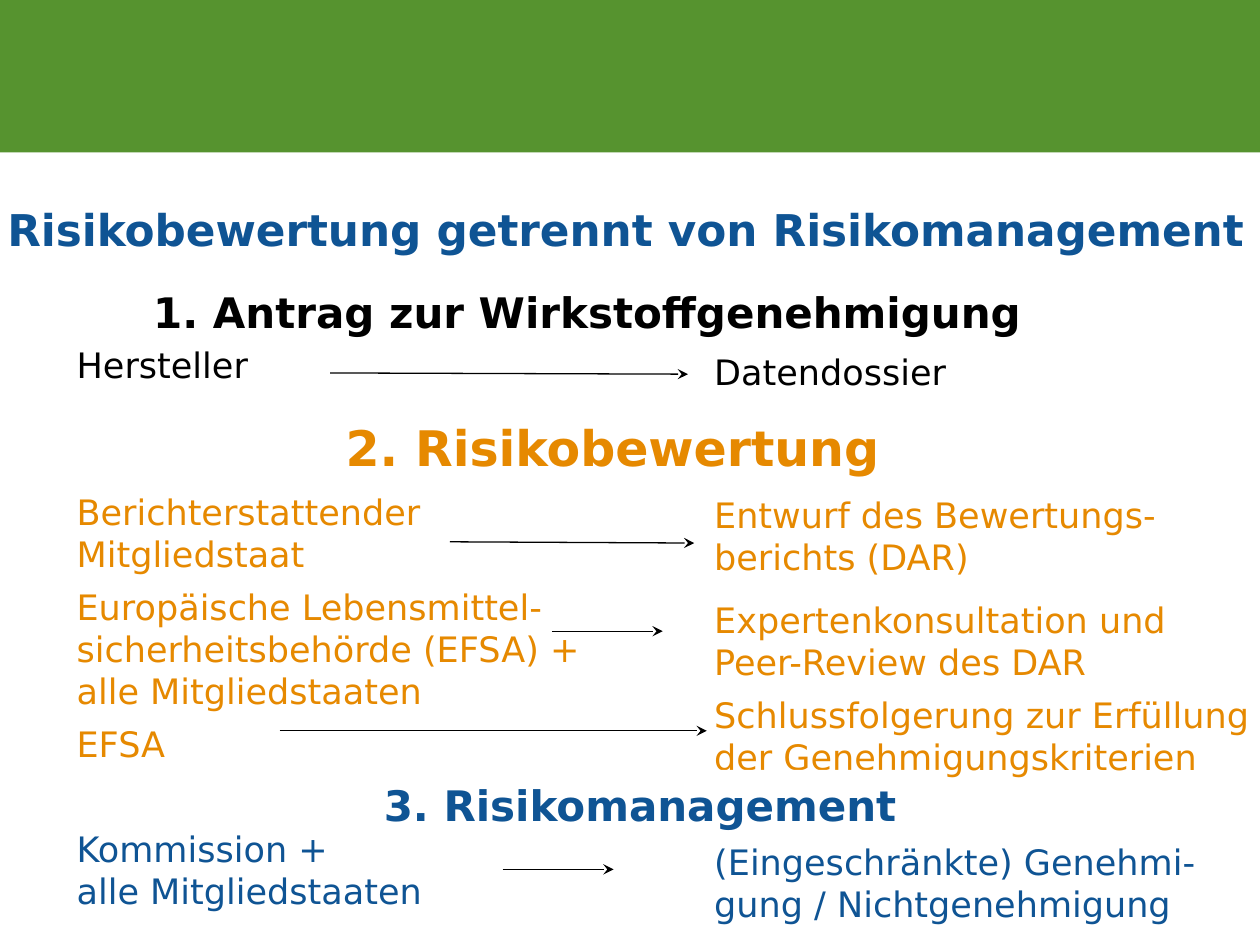
from lxml import etree
from pptx import Presentation
from pptx import util as u
from pptx.dml.color import RGBColor
from pptx.enum import shapes, text
from pptx.oxml.ns import qn

FONT = "DejaVu Sans"
GREEN, BLUE, ORANGE, BLACK, WHITE = "56932F", "0F5494", "E68900", "000000", "FFFFFF"
BODY_SIZE, LINE_HEIGHT = 20, 24

# Content
TITLE = "Risikobewertung getrennt von Risikomanagement"

# text, size, colour, (left, top, width, height)
HEADINGS = [
    ("2. Risikobewertung", 28, ORANGE, (0.35, 3.2, 9.02, 0.7)),
    ("1. Antrag zur Wirkstoffgenehmigung", 24, BLACK, (0.07, 2.18, 9.18, 0.59)),
    ("3. Risikomanagement", 24, BLUE, (2.64, 6.11, 4.88, 0.55)),
]

# Each entry: text, colour, space before; a heading fits into the wide gaps
ACTORS = [
    ("Hersteller", BLACK, 0),
    ("Berichterstattender Mitgliedstaat", ORANGE, 36 + LINE_HEIGHT),
    ("Europäische Lebensmittel-sicherheitsbehörde (EFSA) + alle Mitgliedstaaten", ORANGE, 6),
    ("EFSA", ORANGE, 6),
    ("Kommission +\nalle Mitgliedstaaten", BLUE, 36),
]
RESULTS = [
    ("Datendossier", BLACK, 0),
    ("Entwurf des Bewertungs-berichts (DAR)", ORANGE, 34 + LINE_HEIGHT),
    ("Expertenkonsultation und\nPeer-Review des DAR", ORANGE, 12),
    ("Schlussfolgerung zur Erfüllung der Genehmigungskriterien", ORANGE, 6),
    ("(Eingeschränkte) Genehmi-gung / Nichtgenehmigung", BLUE, 36),
]
COLUMNS = [(ACTORS, (0.51, 2.68, 4.22, 4.69)), (RESULTS, (5.57, 2.73, 4.6, 4.69))]

# Arrows from actor to result: x1, y1, x2, y2
ARROWS = [
    (2.62, 2.96, 5.46, 2.97),
    (3.57, 4.3, 5.51, 4.31),
    (4.38, 5.01, 5.26, 5.01),
    (2.22, 5.8, 5.61, 5.8),
    (3.99, 6.9, 4.87, 6.9),
]


def colour(value):
    return RGBColor.from_string(value)


def inches(lengths):
    return [u.Inches(length) for length in lengths]


def write(paragraph, words, size, ink, bold=False):
    for number, line in enumerate(words.split("\n")):
        if number:
            paragraph.add_line_break()
        run = paragraph.add_run()
        run.text = line
        run.font.name, run.font.size, run.font.bold = FONT, u.Pt(size), bold
        run.font.color.rgb = colour(ink)


def add_panel(slide, place, fill):
    panel = slide.shapes.add_shape(shapes.MSO_SHAPE.RECTANGLE, *inches(place))
    panel.shadow.inherit = False
    panel.fill.solid()
    panel.fill.fore_color.rgb = colour(fill)
    panel.line.fill.background()
    return panel


def add_frame(slide, place, anchor):
    frame = slide.shapes.add_textbox(*inches(place)).text_frame
    frame.word_wrap = True
    frame.vertical_anchor = anchor
    return frame


def add_column(slide, entries, place):
    frame = add_frame(slide, place, text.MSO_ANCHOR.TOP)
    for number, (words, ink, gap) in enumerate(entries):
        paragraph = frame.add_paragraph() if number else frame.paragraphs[0]
        if gap:
            paragraph.space_before = u.Pt(gap)
        write(paragraph, words, BODY_SIZE, ink)


def add_arrow(slide, ends):
    arrow = slide.shapes.add_connector(shapes.MSO_CONNECTOR.STRAIGHT, *inches(ends))
    arrow.line.color.rgb = colour(BLACK)
    arrow.line.width = u.Pt(0.75)
    properties = arrow.element.spPr
    etree.SubElement(properties.find(qn("a:ln")), qn("a:tailEnd"), type="stealth")
    etree.SubElement(properties, qn("a:effectLst"))


def add_heading(slide, words, size, ink, place):
    frame = add_panel(slide, place, WHITE).text_frame
    frame.word_wrap = True
    frame.vertical_anchor = text.MSO_ANCHOR.MIDDLE
    frame.paragraphs[0].alignment = text.PP_ALIGN.CENTER
    write(frame.paragraphs[0], words, size, ink, bold=True)


def main():
    deck = Presentation()
    deck.slide_width, deck.slide_height = inches((10, 7.5))
    slide = deck.slides.add_slide(deck.slide_layouts[6])

    # Banner and title
    add_panel(slide, (0, -0.03, 10, 1.24), GREEN)
    title = add_frame(slide, (-0.04, 1.31, 10.23, 1.02), text.MSO_ANCHOR.MIDDLE)
    write(title.paragraphs[0], TITLE, 25, BLUE, bold=True)

    # Actors, results and the arrows between them
    for entries, place in COLUMNS:
        add_column(slide, entries, place)
    for ends in ARROWS:
        add_arrow(slide, ends)

    # Headings of the three steps
    for heading in HEADINGS:
        add_heading(slide, *heading)

    deck.save("out.pptx")


if __name__ == "__main__":
    main()
